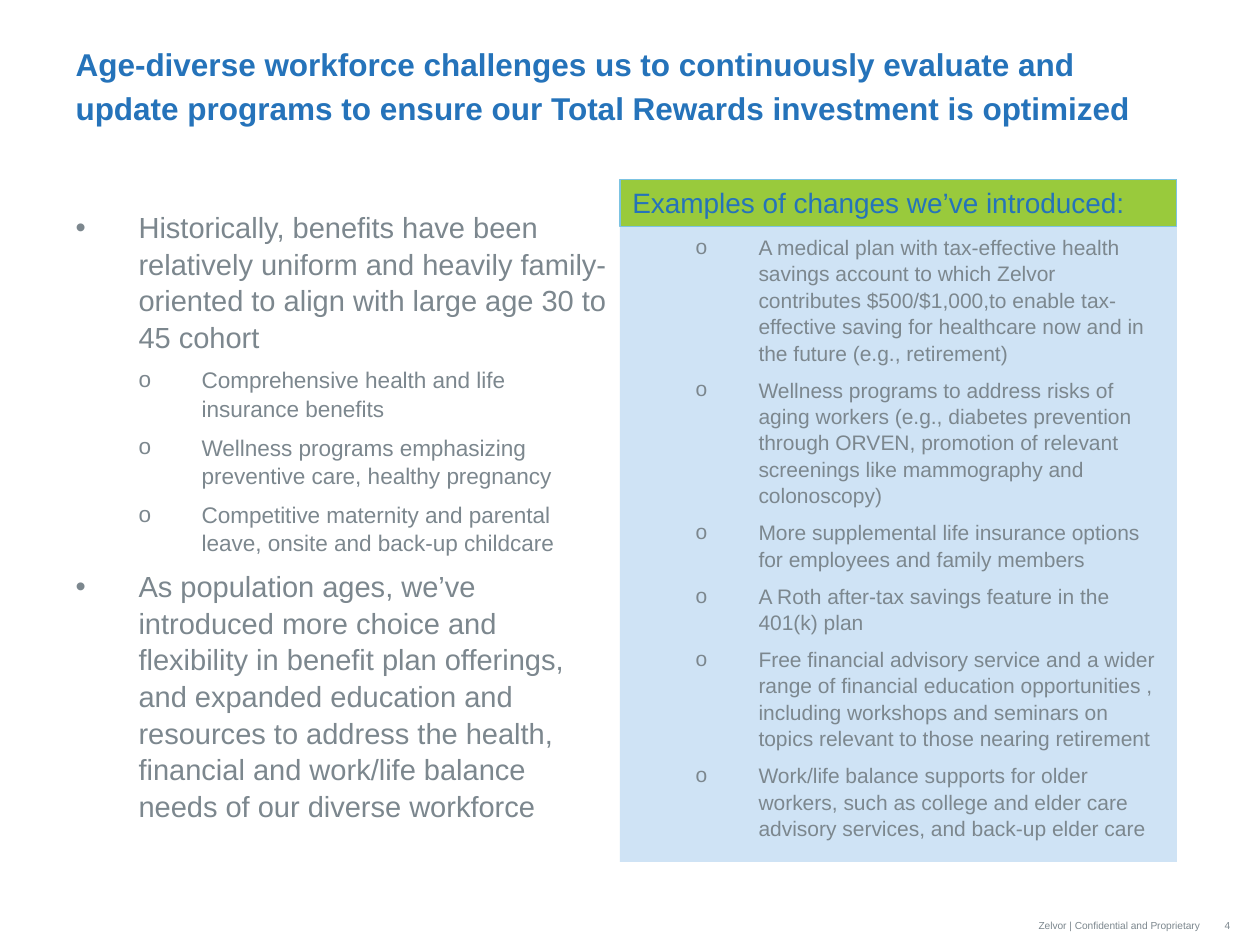
"""Build a slide on how total rewards adapt to an age-diverse workforce."""
from dataclasses import dataclass

from lxml import etree
from pptx import Presentation
from pptx.dml.color import RGBColor
from pptx.enum.shapes import MSO_SHAPE
from pptx.enum.text import MSO_ANCHOR, MSO_AUTO_SIZE, PP_ALIGN
from pptx.oxml.ns import qn
from pptx.util import Pt

RECTANGLE = MSO_SHAPE.RECTANGLE
TOP, MIDDLE, BOTTOM = MSO_ANCHOR.TOP, MSO_ANCHOR.MIDDLE, MSO_ANCHOR.BOTTOM
LEFT, RIGHT = PP_ALIGN.LEFT, PP_ALIGN.RIGHT
NO_AUTOFIT = MSO_AUTO_SIZE.NONE


@dataclass(frozen=True)
class Theme:
    font: str = "Arial"
    blue: RGBColor = RGBColor(0x25, 0x73, 0xBA)
    gray: RGBColor = RGBColor(0x7C, 0x87, 0x8E)
    panel: RGBColor = RGBColor(0xCF, 0xE3, 0xF5)
    green: RGBColor = RGBColor(0x99, 0xCA, 0x3C)
    outline: RGBColor = RGBColor(0x7C, 0xC3, 0xE2)
    title_size: float = 18
    header_size: float = 16
    point_size: float = 16.6
    detail_size: float = 12.9
    example_size: float = 12
    footer_size: float = 10
    title_spacing: float = 1.16
    list_spacing: float = 1.05
    gap: float = 3


@dataclass(frozen=True)
class Area:
    left: float
    top: float
    width: float
    height: float

    def lengths(self) -> tuple:
        return Pt(self.left), Pt(self.top), Pt(self.width), Pt(self.height)


@dataclass(frozen=True)
class Item:
    text: str
    size: float
    level: int = 0


THEME = Theme()
BULLETS = ("•", "o")
INDENT = 36
COLUMN_WIDTH, COLUMN_HEIGHT = 318.24, 362.88
TITLE_AREA = Area(36, 18.72, 648, 90)
POINTS_AREA = Area(36, 115.2, COLUMN_WIDTH, COLUMN_HEIGHT)
EXAMPLES_AREA = Area(354.24, 129.6, COLUMN_WIDTH, COLUMN_HEIGHT)
HEADER_AREA = Area(354.24, 102.4, COLUMN_WIDTH, 26.9)
FOOTER_AREA = Area(464.4, 511.2, 228.24, 28.8)
NUMBER_AREA = Area(692.64, 511.2, 27.36, 28.8)

TITLE = (
    "Age-diverse workforce challenges us to continuously evaluate and "
    "update programs to ensure our Total Rewards investment is optimized"
)
POINTS = (
    Item("Historically, benefits have been relatively uniform and heavily "
         "family-oriented to align with large age 30 to 45 cohort", THEME.point_size),
    Item("Comprehensive health and life insurance benefits", THEME.detail_size, 1),
    Item("Wellness programs emphasizing preventive care, healthy pregnancy",
         THEME.detail_size, 1),
    Item("Competitive maternity and parental leave, onsite and back-up childcare",
         THEME.detail_size, 1),
    Item("As population ages, we’ve introduced more choice and flexibility in benefit "
         "plan offerings, and expanded education and resources to address the health, "
         "financial and work/life balance needs of our diverse workforce",
         THEME.point_size),
)
EXAMPLES = tuple(Item(text, THEME.example_size, 1) for text in (
    "A medical plan with tax-effective health savings account to which Zelvor "
    "contributes $500/$1,000,to enable tax-effective saving for healthcare now and in "
    "the future (e.g., retirement)",
    "Wellness programs to address risks of aging workers (e.g., diabetes prevention "
    "through ORVEN, promotion of relevant screenings like mammography and colonoscopy)",
    "More supplemental life insurance options for employees and family members",
    "A Roth after-tax savings feature in the 401(k) plan",
    "Free financial advisory service and a wider range of financial education "
    "opportunities , including workshops and seminars on topics relevant to those "
    "nearing retirement",
    "Work/life balance supports for older workers, such as college and elder care "
    "advisory services, and back-up elder care",
))


def place(shape, area: Area, anchor) -> None:
    """Move a shape to its area and prepare its text frame."""
    shape.left, shape.top, shape.width, shape.height = area.lengths()
    frame = shape.text_frame
    frame.word_wrap = True
    frame.auto_size = NO_AUTOFIT
    frame.vertical_anchor = anchor


def style(para, size: float, color: RGBColor, bold: bool = False) -> None:
    """Set the font of a whole paragraph."""
    font = para.font
    font.name, font.size, font.bold = THEME.font, Pt(size), bold
    font.color.rgb = color


def write_line(shape, text: str, size: float, color: RGBColor, align=LEFT,
               bold: bool = False):
    """Write one styled paragraph and return it."""
    para = shape.text_frame.paragraphs[0]
    para.text = text
    para.alignment = align
    style(para, size, color, bold)
    return para


def write_list(shape, items: tuple[Item, ...]) -> None:
    """Write bulleted paragraphs with hanging indents."""
    frame = shape.text_frame
    for index, item in enumerate(items):
        para = frame.add_paragraph() if index else frame.paragraphs[0]
        para.text = item.text
        para.level = item.level
        para.line_spacing = THEME.list_spacing
        para.space_before = Pt(THEME.gap if index else 0)
        para.space_after = Pt(THEME.gap)
        properties = para._p.get_or_add_pPr()
        properties.set("marL", str(Pt(INDENT * (item.level + 1))))
        properties.set("indent", str(Pt(-INDENT)))
        etree.SubElement(properties, qn("a:buFont")).set("typeface", THEME.font)
        etree.SubElement(properties, qn("a:buChar")).set("char", BULLETS[item.level])
        style(para, item.size, THEME.gray)


def add_footer(slide, area: Area, text: str, align) -> None:
    """Add a raised footer text at the bottom of the slide."""
    box = slide.shapes.add_textbox(*area.lengths())
    place(box, area, BOTTOM)
    para = write_line(box, text, THEME.footer_size, THEME.gray, align)
    para.runs[0]._r.get_or_add_rPr().set("baseline", "30000")


def add_header(slide) -> None:
    """Add the green heading above the examples."""
    header = slide.shapes.add_shape(RECTANGLE, *HEADER_AREA.lengths())
    header.shadow.inherit = False
    header.fill.solid()
    header.fill.fore_color.rgb = THEME.green
    header.line.color.rgb = THEME.outline
    header.line.width = Pt(0.75)
    place(header, HEADER_AREA, MIDDLE)
    write_line(header, "Examples of changes we’ve introduced:",
               THEME.header_size, THEME.blue)


def main() -> None:
    """Build and save the deck."""
    deck = Presentation()
    deck.slide_width, deck.slide_height = Pt(720), Pt(540)
    slide = deck.slides.add_slide(deck.slide_layouts[3])
    title, points, examples = slide.placeholders

    place(title, TITLE_AREA, TOP)
    heading = write_line(title, TITLE, THEME.title_size, THEME.blue, bold=True)
    heading.line_spacing = THEME.title_spacing

    place(points, POINTS_AREA, TOP)
    write_list(points, POINTS)

    place(examples, EXAMPLES_AREA, TOP)
    examples.fill.solid()
    examples.fill.fore_color.rgb = THEME.panel
    write_list(examples, EXAMPLES)

    add_header(slide)
    add_footer(slide, FOOTER_AREA, "Zelvor | Confidential and Proprietary", RIGHT)
    add_footer(slide, NUMBER_AREA, "4", LEFT)
    deck.save("out.pptx")


if __name__ == "__main__":
    main()
